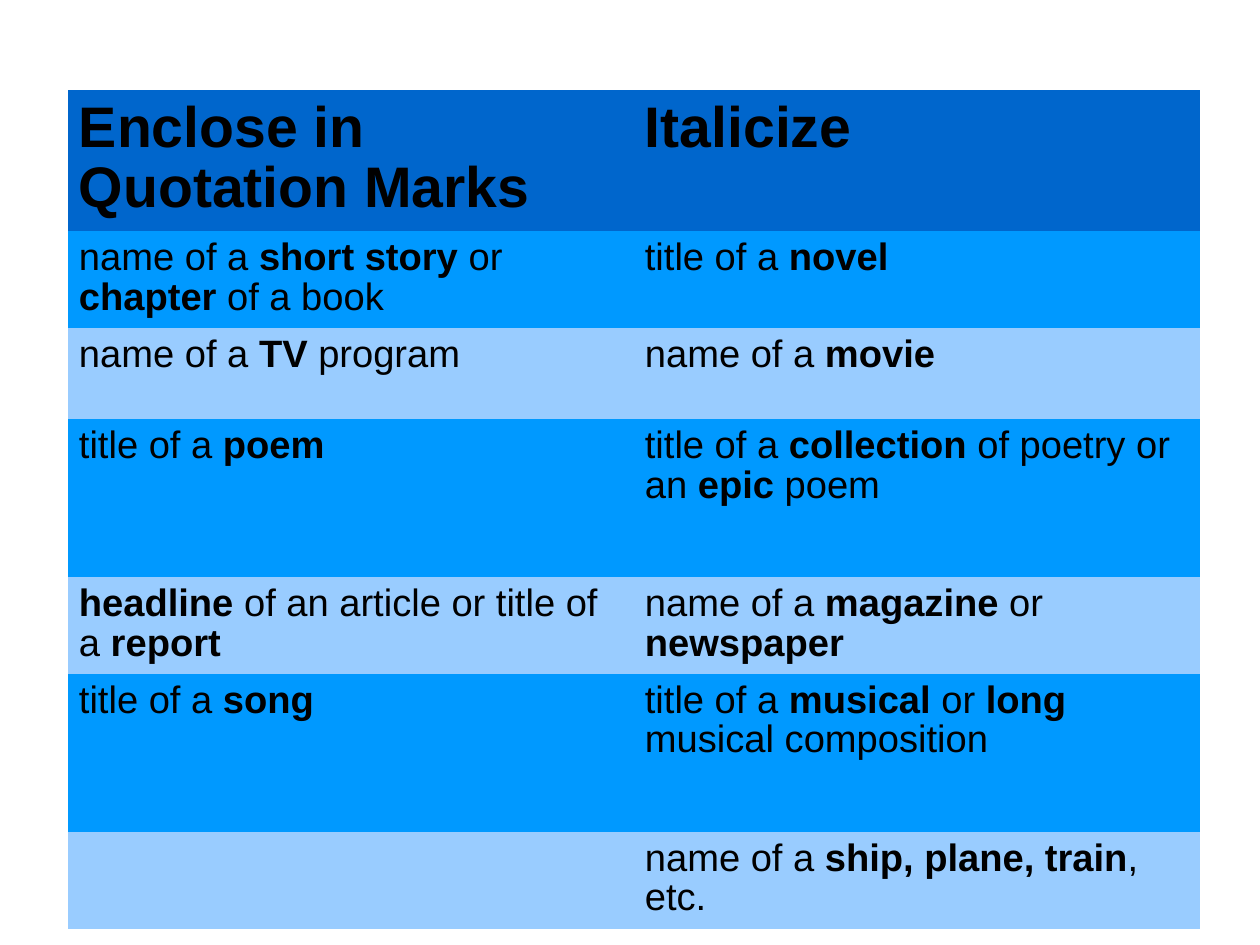
from lxml import etree
from pptx import Presentation
from pptx.dml.color import RGBColor
from pptx.oxml.ns import qn
from pptx.util import Emu, Pt

PX = 8000  # EMU in one px
BORDER_WIDTH = 360  # EMU
FONT = "Arial"
BLACK, WHITE = "000000", "FFFFFF"
HEADER_FILL = "0066CC"
BAND_FILLS = ("0099FF", "99CCFF")

COLUMN_WIDTHS = (566, 566)
ROW_HEIGHTS = (141, 97, 91, 158, 97, 158, 97)

# Asterisks enclose the bold words
TITLE_RULES = (
    ("*Enclose in Quotation Marks*", "*Italicize*"),
    ("name of a *short story* or *chapter* of a book", "title of a *novel*"),
    ("name of a *TV* program", "name of a *movie*"),
    ("title of a *poem*", "title of a *collection* of poetry or an *epic* poem"),
    ("*headline* of an article or title of a *report*",
     "name of a *magazine* or *newspaper*"),
    ("title of a *song*", "title of a *musical* or *long* musical composition"),
    ("", "name of a *ship, plane, train*, etc."),
)


def px(length):
    return Emu(length * PX)


def color(hex_code):
    return RGBColor.from_string(hex_code)


def write_text(cell, marked_text, size):
    para = cell.text_frame.paragraphs[0]
    para.line_spacing = 0.93
    para.space_after = Pt(3.4)
    for index, words in enumerate(marked_text.split("*")):
        if words:
            span = para.add_run()
            span.text = words
            span.font.name = FONT
            span.font.size = Pt(size)
            span.font.bold = index % 2 == 1
            span.font.color.rgb = color(BLACK)


def set_borders(cell):
    properties = cell._tc.get_or_add_tcPr()
    for side in ("a:lnL", "a:lnR", "a:lnT", "a:lnB"):
        line = etree.SubElement(properties, qn(side), w=str(BORDER_WIDTH))
        fill = etree.SubElement(line, qn("a:solidFill"))
        etree.SubElement(fill, qn("a:srgbClr"), val=WHITE)


def style_cell(cell, fill_code, top_margin):
    cell.margin_left = cell.margin_right = px(11)
    cell.margin_top = px(top_margin)
    cell.margin_bottom = px(6)
    set_borders(cell)
    cell.fill.solid()
    cell.fill.fore_color.rgb = color(fill_code)


def add_rules_table(page):
    frame = page.shapes.add_table(
        len(ROW_HEIGHTS), len(COLUMN_WIDTHS), px(68), px(90),
        px(sum(COLUMN_WIDTHS)), px(sum(ROW_HEIGHTS)))
    table = frame.table
    table.first_row = False
    table.horz_banding = False
    for column, width in zip(table.columns, COLUMN_WIDTHS):
        column.width = px(width)
    for index, (row, height, texts) in enumerate(
            zip(table.rows, ROW_HEIGHTS, TITLE_RULES)):
        row.height = px(height)
        is_header = index == 0
        fill_code = HEADER_FILL if is_header else BAND_FILLS[(index - 1) % 2]
        for cell, text in zip(row.cells, texts):
            style_cell(cell, fill_code, 10 if is_header else 8)
            write_text(cell, text, 36 if is_header else 24)


def main():
    deck = Presentation()
    deck.slide_width, deck.slide_height = px(1260), px(945)
    page = deck.slides.add_slide(deck.slide_layouts[6])
    add_rules_table(page)
    deck.save("out.pptx")


if __name__ == "__main__":
    main()
